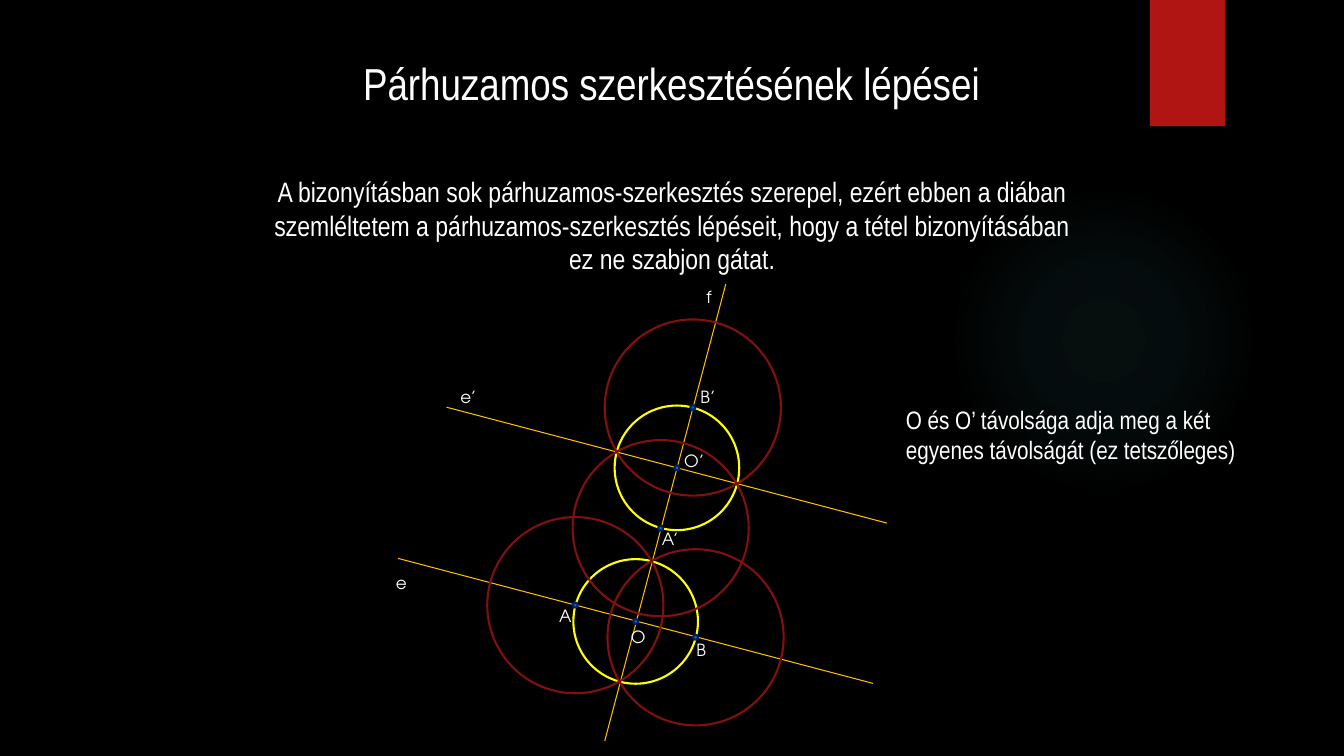
"""Builds the slide on the steps of constructing a parallel line."""
from lxml import etree
from pptx import Presentation
from pptx import util as u
from pptx.dml.color import RGBColor
from pptx.enum import shapes, text
from pptx.oxml import parse_xml
from pptx.oxml.ns import nsdecls, qn

TITLE = "Párhuzamos szerkesztésének lépései"
INTRO = ("A bizonyításban sok párhuzamos-szerkesztés szerepel, ezért ebben a diában "
         "szemléltetem a párhuzamos-szerkesztés lépéseit, hogy a tétel bizonyításában "
         "ez ne szabjon gátat.")
NOTE = "O és O’ távolsága adja meg a két egyenes távolságát (ez tetszőleges)"

COLORS = {"bg": "000000", "text": "FFFFFF", "tab": "B01513", "glow": "50B9C1",
          "line": "FFC000", "base": "FFFF00", "arc": "82100E",
          "dot": "0070C0", "dot_edge": "002060"}
BODY_FONT, LABEL_FONT = "Arial Narrow", "TeX Gyre Adventor"

LINES = {"e": (10.03, 14.07, 22, 17.22),
         "f": (18.29, 7.16, 15.24, 18.67),
         "e’": (11.25, 10.26, 22.35, 13.18)}
POINTS = {"O": (16.02, 15.66), "A": (14.5, 15.25), "B": (17.53, 16.06),
          "O’": (17.06, 11.79), "A’": (16.65, 13.31), "B’": (17.46, 10.27)}
LABELS = {"O": (15.65, 15.67), "A": (13.84, 15.14), "B": (17.3, 16),
          "O’": (16.99, 11.23), "A’": (16.43, 13.21), "B’": (17.4, 9.63),
          "e’": (11.35, 9.63), "e": (9.73, 14.3), "f": (17.55, 7.09)}
BASE_RADIUS, ARC_RADIUS, DOT_RADIUS = 1.57, 2.22, 0.06
GLOW_STOPS = [(0, 7), (36, 6), (69, 0)]


def rgb(name):
    return RGBColor.from_string(COLORS[name])


def cm(*values):
    return [u.Cm(v) for v in values]


def write(tf, words, size=12, font=LABEL_FONT, align=text.PP_ALIGN.LEFT):
    tf.word_wrap = True
    tf.vertical_anchor = text.MSO_ANCHOR.TOP
    p = tf.paragraphs[0]
    p.alignment = align
    r = p.add_run()
    r.text = words
    r.font.size, r.font.name = u.Pt(size), font
    r.font.color.rgb = rgb("text")


def add_text(s, box, words, **fmt):
    write(s.shapes.add_textbox(*cm(*box)).text_frame, words, **fmt)


def add_solid(s, kind, box, fill=None, line=None):
    sp = s.shapes.add_shape(kind, *cm(*box))
    sp.shadow.inherit = False
    if fill:
        sp.fill.solid()
        sp.fill.fore_color.rgb = rgb(fill)
    else:
        sp.fill.background()
    if line:
        sp.line.color.rgb = rgb(line)
        sp.line.width = u.Pt(1.5)
    else:
        sp.line.fill.background()
    return sp


def add_circle(s, center, radius, **fmt):
    x, y = center
    box = (x - radius, y - radius, 2 * radius, 2 * radius)
    return add_solid(s, shapes.MSO_SHAPE.OVAL, box, **fmt)


def add_glow(s, center, radius):
    pr = add_circle(s, center, radius)._element.spPr
    stops = "".join(
        f'<a:gs pos="{pos * 1000}"><a:srgbClr val="{COLORS["glow"]}">'
        f'<a:alpha val="{alpha * 1000}"/></a:srgbClr></a:gs>' for pos, alpha in GLOW_STOPS)
    grad = parse_xml(
        f'<a:gradFill {nsdecls("a")}><a:gsLst>{stops}</a:gsLst><a:path path="circle">'
        '<a:fillToRect l="50000" t="50000" r="50000" b="50000"/></a:path></a:gradFill>')
    pr.replace(pr.find(qn("a:noFill")), grad)


def add_line(s, ends):
    c = s.shapes.add_connector(shapes.MSO_CONNECTOR.STRAIGHT, *cm(*ends))
    c.line.color.rgb = rgb("line")
    c.line.width = u.Pt(0.75)
    etree.SubElement(c._element.spPr, qn("a:effectLst"))


def main():
    prs = Presentation()
    prs.slide_width, prs.slide_height = cm(33.87, 19.05)
    s = prs.slides.add_slide(prs.slide_layouts[5])
    s.background.fill.solid()
    s.background.fill.fore_color.rgb = rgb("bg")

    add_glow(s, (27.81, 8.56), 3.91)
    add_solid(s, shapes.MSO_SHAPE.RECTANGLE, (28.98, 0, 1.9, 3.18), fill="tab")

    title = s.shapes.title
    title.left, title.top, title.width, title.height = cm(3.86, 1.27, 26.14, 3.89)
    center = text.PP_ALIGN.CENTER
    write(title.text_frame, TITLE, size=32, font=BODY_FONT, align=center)
    add_text(s, (6.63, 4.27, 20.62, 2.82), INTRO, size=20, font=BODY_FONT, align=center)

    for ends in LINES.values():
        add_line(s, ends)
    for name in ("O", "O’"):
        add_circle(s, POINTS[name], BASE_RADIUS, line="base")
    for name in ("A", "B", "A’", "B’"):
        add_circle(s, POINTS[name], ARC_RADIUS, line="arc")
    for point in POINTS.values():
        add_circle(s, point, DOT_RADIUS, fill="dot", line="dot_edge")
    for name, (x, y) in LABELS.items():
        add_text(s, (x, y, 1.4, 0.76), name)

    add_text(s, (22.58, 10.06, 9.8, 1.8), NOTE, size=18, font=BODY_FONT)
    prs.save("out.pptx")


if __name__ == "__main__":
    main()
